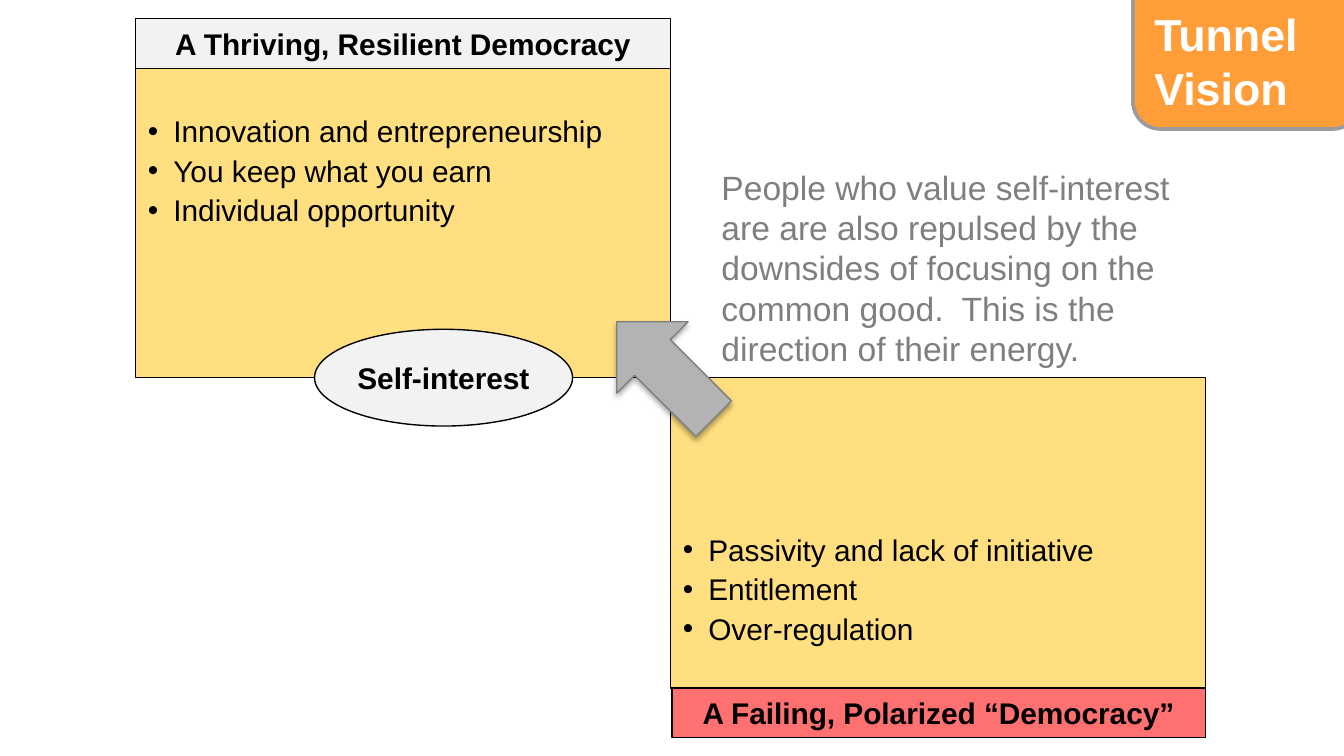
from pptx import Presentation
from pptx.dml.color import RGBColor
from pptx.enum.shapes import MSO_SHAPE as SHAPE
from pptx.enum.text import MSO_ANCHOR as ANCHOR, PP_ALIGN as ALIGN
from pptx.oxml import parse_xml
from pptx.oxml.ns import nsdecls
from pptx.util import Inches, Pt
from lxml.etree import SubElement

W = 10
H = W * 9 / 16
COL_W, BOX_H, HEAD_H = 3.98, 2.31, 0.37
LEFT, TOP = 1.01, 0.5
MID_X, MID_Y = LEFT + COL_W, TOP + BOX_H
BLACK, GREY, PALE = "000000", "7F7F7F", "F2F2F2"

# Quadrants: column left, row top, anchor, top and bottom inset, bullets
QUADRANTS = [
    (LEFT, TOP, ANCHOR.TOP, 0.34, 0.04,
     ["Innovation and entrepreneurship", "You keep what you earn",
      "Individual opportunity"]),
    (MID_X, MID_Y, ANCHOR.BOTTOM, 0.04, 0.31,
     ["Passivity and lack of initiative", "Entitlement", "Over-regulation"]),
]
# Labels: preset, place, fill, text, wrap
LABELS = [
    (SHAPE.RECTANGLE, (LEFT, TOP - HEAD_H + 0.01, COL_W, HEAD_H), PALE,
     "A Thriving, Resilient Democracy", True),
    (SHAPE.OVAL, (2.34, MID_Y - 0.36, 1.92, 0.72), PALE, "Self-interest", False),
    (SHAPE.RECTANGLE, (MID_X + 0.01, MID_Y + BOX_H, COL_W - 0.01, HEAD_H), "FF7171",
     "A Failing, Polarized “Democracy”", True),
]
NOTE = ("People who value self-interest are are also repulsed by the downsides "
        "of focusing on the common good.  This is the direction of their energy.")
TAG = "Tunnel Vision"


def rgb(color):
    return RGBColor.from_string(color)


def add_block(kind, box, fill, line=BLACK, width=0.75):
    s = slide.shapes.add_shape(kind, *map(Inches, box))
    s.shadow.inherit = False
    s.fill.solid()
    s.fill.fore_color.rgb = rgb(fill)
    s.line.color.rgb = rgb(line)
    s.line.width = Pt(width)
    return s


def write(s, lines, size=16, color=BLACK, bold=False, align=ALIGN.LEFT,
          anchor=ANCHOR.MIDDLE, insets=(0.1, 0.05, 0.1, 0.05), bullets=False,
          wrap=True):
    """Fill a shape with paragraphs; insets run left, top, right, bottom."""
    tf = s.text_frame
    frame = dict(zip(("margin_left", "margin_top", "margin_right", "margin_bottom"),
                     map(Inches, insets)),
                 word_wrap=wrap, vertical_anchor=anchor)
    for name, value in frame.items():
        setattr(tf, name, value)
    for i, text in enumerate(lines):
        p = tf.add_paragraph() if i else tf.paragraphs[0]
        p.alignment = align
        if bullets:
            if i:
                p.space_before = Pt(2)
            pPr = p._p.get_or_add_pPr()
            pPr.set("marL", str(Inches(0.19)))
            pPr.set("indent", str(-Inches(0.19)))
            pPr.append(parse_xml(f'<a:buFont {nsdecls("a")} typeface="Arial"/>'))
            pPr.append(parse_xml(f'<a:buChar {nsdecls("a")} char="•"/>'))
        r = p.add_run()
        r.text = text
        for name, value in {"name": "Arial", "size": Pt(size), "bold": bold}.items():
            setattr(r.font, name, value)
        r.font.color.rgb = rgb(color)


def set_alpha(s, percent):
    clr = s.fill._xPr.find(".//{*}solidFill/{*}srgbClr")
    SubElement(clr, clr.tag.replace("srgbClr", "alpha"), val=str(percent * 1000))


def add_shadow(s):
    effects = s._element.spPr.find("{*}effectLst")
    effects.append(parse_xml(
        f'<a:outerShdw {nsdecls("a")} blurRad="{Pt(3.1)}" dist="{Pt(1.8)}" '
        'dir="5400000" rotWithShape="0"><a:srgbClr val="000000">'
        '<a:alpha val="35000"/></a:srgbClr></a:outerShdw>'))


prs = Presentation()
prs.slide_width, prs.slide_height = Inches(W), Inches(H)
slide = prs.slides.add_slide(prs.slide_layouts[6])

for x, y, anchor, top, bottom, lines in QUADRANTS:
    s = add_block(SHAPE.FLOWCHART_PROCESS, (x, y, COL_W, BOX_H), "FFC000")
    set_alpha(s, 50)
    write(s, lines, anchor=anchor, insets=(0.09, top, 0.09, bottom), bullets=True)

for kind, box, fill, text, wrap in LABELS:
    write(add_block(kind, box, fill), [text], bold=True, align=ALIGN.CENTER, wrap=wrap)

arrow = add_block(SHAPE.RIGHT_ARROW, (4.44, 2.38, 1.02, 0.75), "B3B3B3", GREY)
arrow.rotation = 225
add_shadow(arrow)

note = slide.shapes.add_textbox(*map(Inches, (5.27, 1.19, 3.7, 1.62)))
write(note, [NOTE], size=18, color=GREY, anchor=ANCHOR.TOP)

tag = add_block(SHAPE.ROUNDED_RECTANGLE, (8.43, -0.27, 1.69, 1.23), "FF9E38", "9B9B9B", 2)
write(tag, [TAG], size=24, color="FFFFFF", bold=True, anchor=ANCHOR.BOTTOM)

prs.save("out.pptx")
